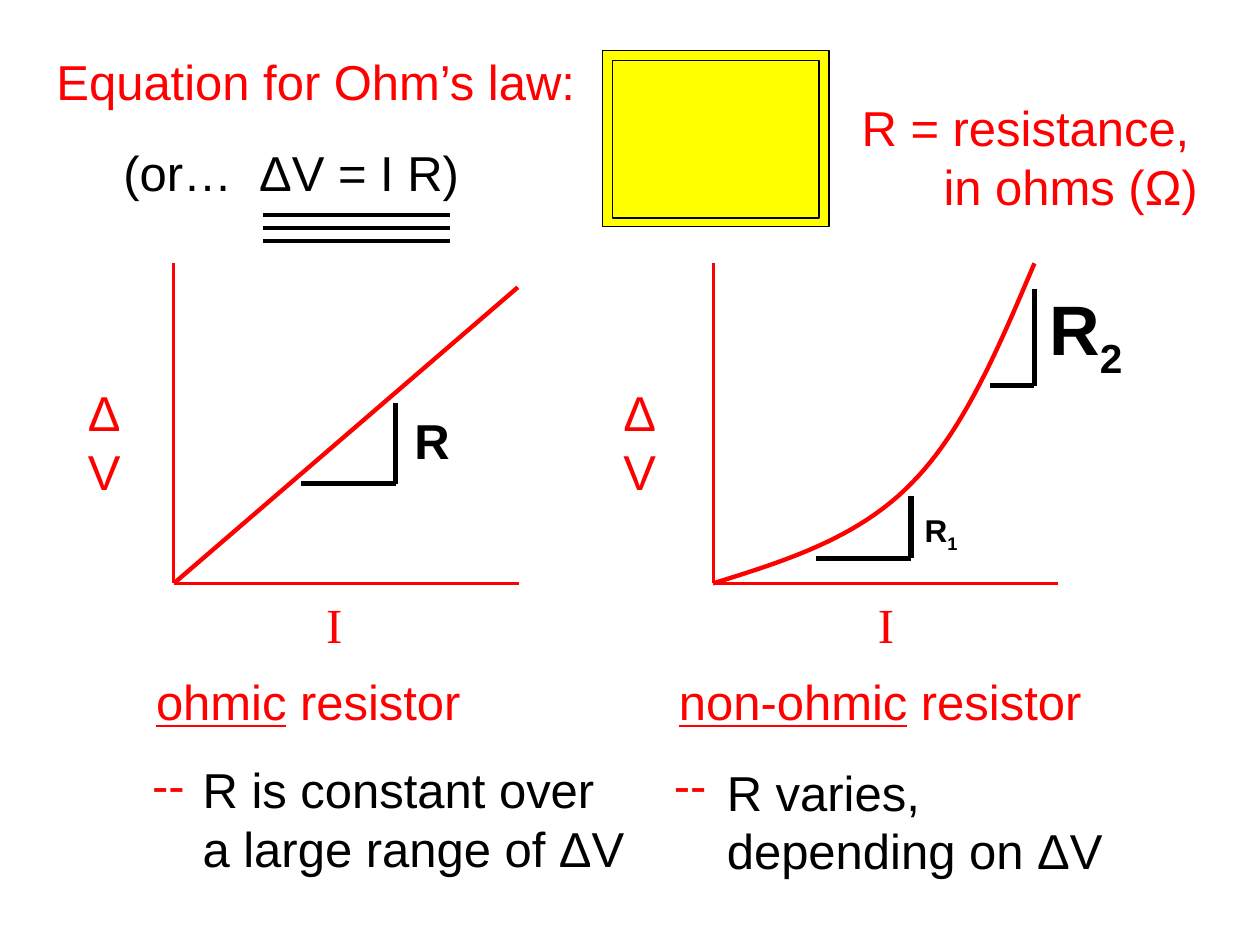
from lxml import etree
from pptx import Presentation
from pptx.dml.color import RGBColor
from pptx.enum.shapes import MSO_CONNECTOR, MSO_SHAPE
from pptx.enum.text import MSO_ANCHOR
from pptx.oxml.ns import qn
from pptx.util import Inches, Pt

RED = RGBColor(0xFF, 0x00, 0x00)
BLACK = RGBColor(0x00, 0x00, 0x00)
YELLOW = RGBColor(0xFF, 0xFF, 0x00)
STRAIGHT = MSO_CONNECTOR.STRAIGHT
RECTANGLE = MSO_SHAPE.RECTANGLE
TOP, MIDDLE = MSO_ANCHOR.TOP, MSO_ANCHOR.MIDDLE


def bezier(start, control_1, control_2, end, steps=24):
    """Points along a cubic curve, without its start."""
    points = []
    for step in range(1, steps + 1):
        t = step / steps
        weights = ((1 - t) ** 3, 3 * t * (1 - t) ** 2, 3 * t ** 2 * (1 - t), t ** 3)
        corners = (start, control_1, control_2, end)
        points.append(tuple(sum(w * c[axis] for w, c in zip(weights, corners))
                            for axis in (0, 1)))
    return points


class LessonSlide:
    font = "Arial"
    size = 28
    axis_width = 1.75
    graph_width = 2.5
    slope_width = 3

    def __init__(self, slide):
        self.slide = slide
        self.shapes = slide.shapes

    def text(self, left, top, width, height, lines, color=RED, size=None,
             font=None, anchor=TOP, bold=False, wrap=False):
        """Each line is a string or a list of run strings."""
        box = self.shapes.add_textbox(Inches(left), Inches(top),
                                      Inches(width), Inches(height))
        frame = box.text_frame
        frame.word_wrap = wrap
        frame.vertical_anchor = anchor
        for index, line in enumerate(lines):
            paragraph = frame.paragraphs[0] if index == 0 else frame.add_paragraph()
            for part in [line] if isinstance(line, str) else line:
                run = paragraph.add_run()
                run.text = part
                run.font.name = font or self.font
                run.font.size = Pt(size or self.size)
                run.font.bold = bold
                run.font.color.rgb = color
        return frame

    def resistance(self, left, top, width, height, size, subscript=None):
        parts = ["R", subscript] if subscript else ["R"]
        frame = self.text(left, top, width, height, [parts], BLACK, size, bold=True)
        for run in frame.paragraphs[0].runs[1:]:
            run.font._element.set("baseline", "-25000")

    def line(self, start, end, color, width):
        connector = self.shapes.add_connector(
            STRAIGHT, *(Inches(value) for value in (*start, *end)))
        connector.line.color.rgb = color
        connector.line.width = Pt(width)
        etree.SubElement(connector._element.spPr, qn("a:effectLst"))

    def axes(self, origin, height=2.54, width=2.74):
        x, y = origin
        self.line((x, y - height), origin, RED, self.axis_width)
        self.line(origin, (x + width, y), RED, self.axis_width)

    def slope(self, corner, run, rise):
        """Slope triangle: horizontal run and vertical rise meeting at a corner."""
        x, y = corner
        self.line((x - run, y), corner, BLACK, self.slope_width)
        self.line((x, y - rise), corner, BLACK, self.slope_width)

    def curve(self, points):
        (x, y), *rest = [(Inches(px), Inches(py)) for px, py in points]
        builder = self.shapes.build_freeform(x, y)
        builder.add_line_segments(rest, close=False)
        shape = builder.convert_to_shape()
        shape.shadow.inherit = False
        shape.fill.background()
        shape.line.color.rgb = RED
        shape.line.width = Pt(self.graph_width)

    def panel(self, left, top, width, height):
        shape = self.shapes.add_shape(RECTANGLE, Inches(left), Inches(top),
                                      Inches(width), Inches(height))
        shape.shadow.inherit = False
        shape.fill.solid()
        shape.fill.fore_color.rgb = YELLOW
        shape.line.color.rgb = BLACK
        shape.line.width = Pt(0.75)


def main():
    prs = Presentation()
    prs.slide_width, prs.slide_height = Inches(10), Inches(7.5)
    lesson = LessonSlide(prs.slides.add_slide(prs.slide_layouts[6]))

    # Equation and its double-framed answer panel
    lesson.panel(4.78, 0.4, 1.8, 1.4)
    lesson.panel(4.86, 0.48, 1.64, 1.25)
    lesson.text(0.35, 0.36, 4.34, 0.57, ["Equation for Ohm’s law:"], anchor=MIDDLE)
    definition = lesson.text(6.74, 0.73, 2.99, 1.03,
                             ["R = resistance,", "in ohms (Ω)"], anchor=MIDDLE)
    definition.paragraphs[1]._p.get_or_add_pPr().set("marL", str(Inches(0.65)))

    # Alternative form, underlined three times
    lesson.text(0.88, 1.08, 2.88, 0.57, ["(or…  ΔV = I R)"], BLACK, anchor=MIDDLE)
    for rule in range(3):
        y = 1.71 + 0.1 * rule
        lesson.line((2.09, y), (3.57, y), BLACK, 2.25)

    # Resistor names and descriptions
    for left, width, kind in ((1.14, 2.73, "ohmic"), (5.29, 3.52, "non-ohmic")):
        name = lesson.text(left, 5.28, width, 0.57, [[kind, " resistor"]],
                           anchor=MIDDLE)
        name.paragraphs[0].runs[0].font.underline = True
    for dash_left in (1.11, 5.25):
        lesson.text(dash_left, 5.94, 0.57, 0.57, ["--"], anchor=MIDDLE)
    lesson.text(1.51, 5.98, 3.64, 1.03,
                ["R is constant over", "a large range of ΔV"], BLACK, anchor=MIDDLE)
    lesson.text(5.67, 6, 3.28, 1.03,
                ["R varies,", "depending on ΔV"], BLACK, anchor=MIDDLE)

    # Axes with their labels
    ohmic_origin, non_ohmic_origin = (1.38, 4.63), (5.66, 4.63)
    for origin, voltage_left, current_left in ((ohmic_origin, 0.6, 2.49),
                                               (non_ohmic_origin, 4.85, 6.87)):
        lesson.axes(origin)
        lesson.text(voltage_left, 2.99, 0.7, 0.57, ["ΔV"], wrap=True)
        lesson.text(current_left, 4.67, 0.33, 0.57, ["I"], font="Times New Roman")

    # Ohmic graph: constant slope
    lesson.line(ohmic_origin, (4.11, 2.28), RED, lesson.graph_width)
    lesson.slope((3.14, 3.84), 0.75, 0.64)
    lesson.resistance(3.19, 3.21, 0.48, 0.57, 28)

    # Non-ohmic graph: slope grows along the curve
    bend = (7.23, 3.84)
    lesson.curve([non_ohmic_origin,
                  *bezier(non_ohmic_origin, (6.24, 4.45), (6.81, 4.27), bend),
                  *bezier(bend, (7.65, 3.42), (7.93, 2.75), (8.21, 2.09))])
    lesson.slope((7.23, 4.43), 0.75, 0.49)
    lesson.resistance(7.24, 4.01, 0.48, 0.4, 18, "1")
    lesson.slope((8.21, 3.06), 0.35, 0.77)
    lesson.resistance(8.23, 2.22, 0.82, 0.77, 40, "2")

    prs.save("out.pptx")


if __name__ == "__main__":
    main()
